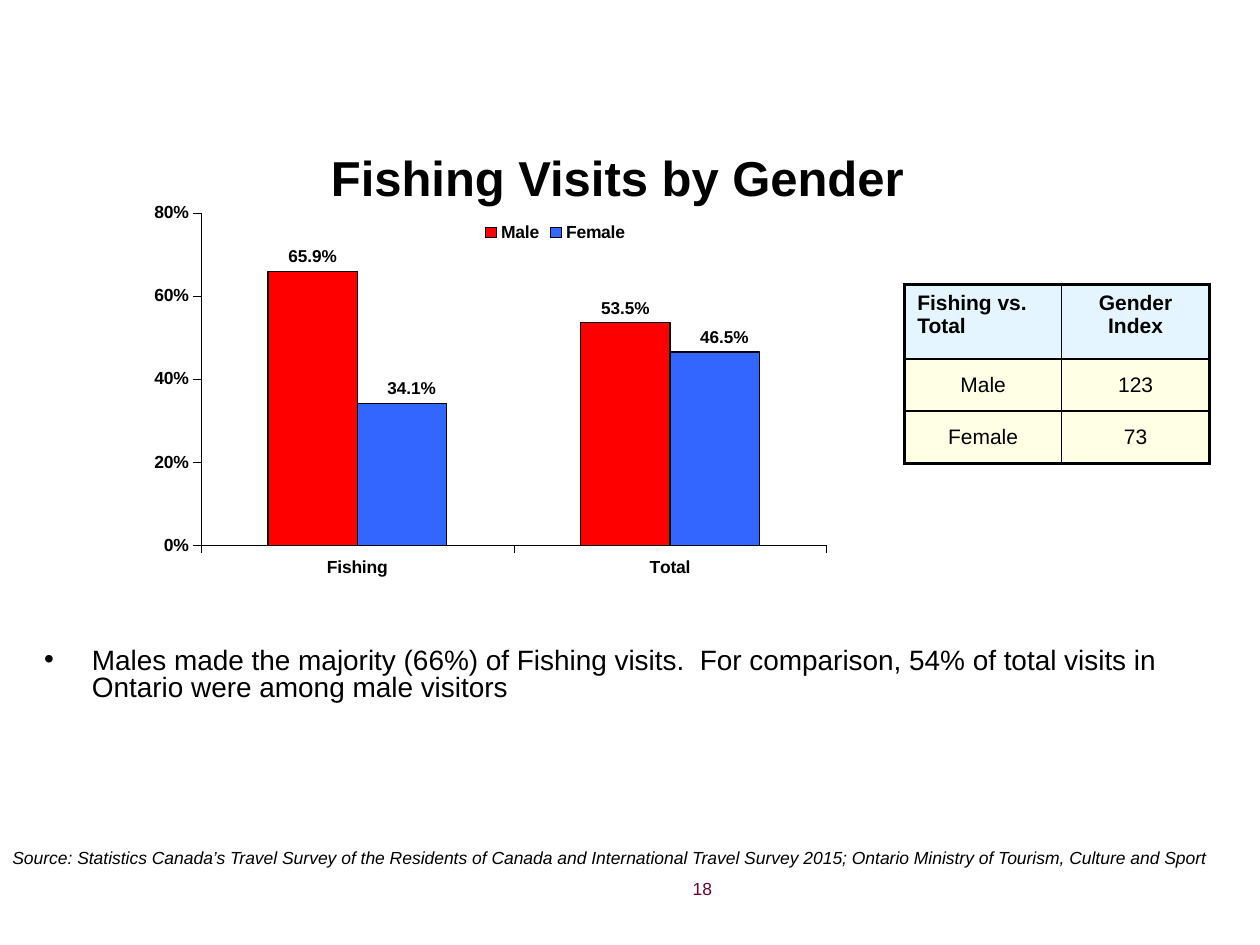
from lxml import etree
from pptx import Presentation, util as u
from pptx.chart.data import CategoryChartData
from pptx.dml.color import RGBColor
from pptx.enum import chart as ch, text
from pptx.oxml.ns import qn

COLORS = {"black": "000000", "male": "FF0000", "female": "3366FF",
          "header": "CCECFF", "body": "FFFFCC", "number": "660033"}
FONT = "Arial"
LEFT, CENTER, RIGHT = text.PP_ALIGN.LEFT, text.PP_ALIGN.CENTER, text.PP_ALIGN.RIGHT
TOP, MIDDLE = text.MSO_ANCHOR.TOP, text.MSO_ANCHOR.MIDDLE


def rgb(name):
    return RGBColor.from_string(COLORS[name])


def inches(box):
    return [u.Inches(v) for v in box]


def style(font, size, color="black", bold=False, italic=False):
    font.name, font.size, font.bold, font.italic = FONT, u.Pt(size), bold, italic
    font.color.rgb = rgb(color)


def write(tf, words, size, align=LEFT, anchor=TOP, **fmt):
    tf.word_wrap, tf.vertical_anchor = True, anchor
    p = tf.paragraphs[0]
    p.alignment = align
    r = p.add_run()
    r.text = words
    style(r.font, size, **fmt)
    return p


def place(sp, box):
    sp.left, sp.top, sp.width, sp.height = inches(box)


def title(s, box, words):
    sp = s.shapes.title
    place(sp, box)
    tf = sp.text_frame
    tf.auto_size, tf.margin_top = text.MSO_AUTO_SIZE.NONE, u.Inches(0.09)
    write(tf, words, 28, CENTER, bold=True)


def bullets(s, box, words):
    sp = s.placeholders[1]
    place(sp, box)
    sp.text_frame.auto_size = text.MSO_AUTO_SIZE.NONE
    p = write(sp.text_frame, words, 16)
    p.line_spacing, p.space_before = 0.8, u.Pt(0)
    pPr = p._p.get_or_add_pPr()
    pPr.set("marL", str(u.Inches(0.38)))
    pPr.set("indent", str(-u.Inches(0.38)))
    etree.SubElement(pPr, qn("a:buChar"), char="•")


def textbox(s, box, words, **fmt):
    write(s.shapes.add_textbox(*inches(box)).text_frame, words, 10, **fmt)


def set_layout(parent, index, **values):
    """Manual chart layout, in shares of the chart's size."""
    for old in parent.findall(qn("c:layout")):
        parent.remove(old)
    layout = etree.Element(qn("c:layout"))
    manual = etree.SubElement(layout, qn("c:manualLayout"))
    for tag, val in values.items():
        etree.SubElement(manual, qn("c:" + tag), val=str(val))
    parent.insert(index, layout)


def gender_chart(s, box):
    data = CategoryChartData(number_format="0.0%")
    data.categories = ["Fishing", "Total"]
    data.add_series("Male", [0.659, 0.535])
    data.add_series("Female", [0.341, 0.465])
    chart = s.shapes.add_chart(ch.XL_CHART_TYPE.COLUMN_CLUSTERED, *inches(box), data).chart
    chart.has_title = False
    style(chart.font, 10, bold=True)

    # Plot and series
    plot = chart.plots[0]
    plot.gap_width, plot.overlap, plot.vary_by_categories = 150, 0, False
    for series, color in zip(plot.series, ("male", "female")):
        series.format.fill.solid()
        series.format.fill.fore_color.rgb = rgb(color)
        series.format.line.color.rgb = rgb("black")
        series.format.line.width = u.Pt(0.75)
        labels = series.data_labels
        labels.show_value, labels.number_format = True, "0.0%"
        labels.number_format_is_linked = False
        labels.position = ch.XL_LABEL_POSITION.OUTSIDE_END
        style(labels.font, 9.8, bold=True)

    # Female labels sit slightly right of their bars
    for i, shift in enumerate((0.01, 0.01)):
        label = plot.series[1].points[i].data_label
        style(label.font, 9.8, bold=True)
        label.position = ch.XL_LABEL_POSITION.OUTSIDE_END
        for dLbl in plot.series[1].data_labels._element.findall(qn("c:dLbl")):
            set_layout(dLbl, 1, x=shift, y=0)

    # Axes
    for axis in (chart.category_axis, chart.value_axis):
        axis.has_major_gridlines = False
        axis.major_tick_mark = ch.XL_TICK_MARK.OUTSIDE
        axis.minor_tick_mark = ch.XL_TICK_MARK.NONE
        axis.format.line.color.rgb = rgb("black")
        axis.format.line.width = u.Pt(0.19)
        style(axis.tick_labels.font, 10, bold=True)
    axis = chart.value_axis
    axis.minimum_scale, axis.maximum_scale, axis.major_unit = 0, 0.8, 0.2
    axis.tick_labels.number_format = "0%"
    axis.tick_labels.number_format_is_linked = False

    # Legend inside the plot
    chart.has_legend = True
    legend = chart.legend
    legend.position, legend.include_in_layout = ch.XL_LEGEND_POSITION.TOP, False
    style(legend.font, 10, bold=True)
    set_layout(legend._element, 1, xMode="edge", yMode="edge", x=0.39, y=0.06)
    set_layout(chart._chartSpace.chart.plotArea, 0, layoutTarget="inner",
               xMode="edge", yMode="edge", x=0.1, y=0.05, w=0.65, h=0.7)


def cell_look(cell, color, borders):
    """Borders go before the half-transparent fill."""
    cell.fill.solid()
    cell.fill.fore_color.rgb = rgb(color)
    tcPr = cell._tc.get_or_add_tcPr()
    etree.SubElement(next(tcPr.iter(qn("a:srgbClr"))), qn("a:alpha"), val="50000")
    for i, (side, width) in enumerate(borders.items()):
        ln = etree.Element(qn("a:ln" + side), w=str(u.Pt(width)))
        fill = etree.SubElement(ln, qn("a:solidFill"))
        etree.SubElement(fill, qn("a:srgbClr"), val=COLORS["black"])
        tcPr.insert(i, ln)


def index_table(s, box):
    rows = [("Fishing vs. Total", "Gender Index"), ("Male", "123"), ("Female", "73")]
    table = s.shapes.add_table(3, 2, *inches(box)).table
    table.first_row = table.horz_banding = False
    for col, share in zip(table.columns, (0.515, 0.485)):
        col.width = u.Inches(box[2] * share)
    for row, share in zip(table.rows, (0.415, 0.2925, 0.2925)):
        row.height = u.Inches(box[3] * share)
    for i, row in enumerate(rows):
        for j, words in enumerate(row):
            cell, head = table.cell(i, j), i == 0
            if not head:
                cell.margin_left = cell.margin_right = cell.margin_top = cell.margin_bottom = 0
            write(cell.text_frame, words, 12, LEFT if head and j == 0 else CENTER, bold=head)
            cell.vertical_anchor = TOP if head else MIDDLE
            outer = {"L": j == 0, "R": j == 1, "T": i == 0, "B": i == 2}
            cell_look(cell, "header" if head else "body",
                      {side: 2.25 if edge else 1 for side, edge in outer.items()})


def main():
    prs = Presentation()
    prs.slide_width, prs.slide_height = u.Inches(10), u.Inches(7.5)
    s = prs.slides.add_slide(prs.slide_layouts[1])
    title(s, (0.4, 1.08, 9, 0.75), "Fishing Visits by Gender")
    index_table(s, (7.18, 2.26, 2.42, 1.42))
    bullets(s, (0.25, 5.1, 9.5, 1.67),
            "Males made the majority (66%) of Fishing visits.  For comparison, "
            "54% of total visits in Ontario were among male visitors")
    textbox(s, (5.08, 6.92, 0.67, 0.35), "18", align=RIGHT, color="number")
    gender_chart(s, (0.83, 1.5, 7.64, 3.77))
    textbox(s, (0, 6.67, 9.8, 0.27),
            "Source: Statistics Canada’s Travel Survey of the Residents of Canada and "
            "International Travel Survey 2015; Ontario Ministry of Tourism, Culture and Sport",
            italic=True)
    prs.save("out.pptx")


if __name__ == "__main__":
    main()
